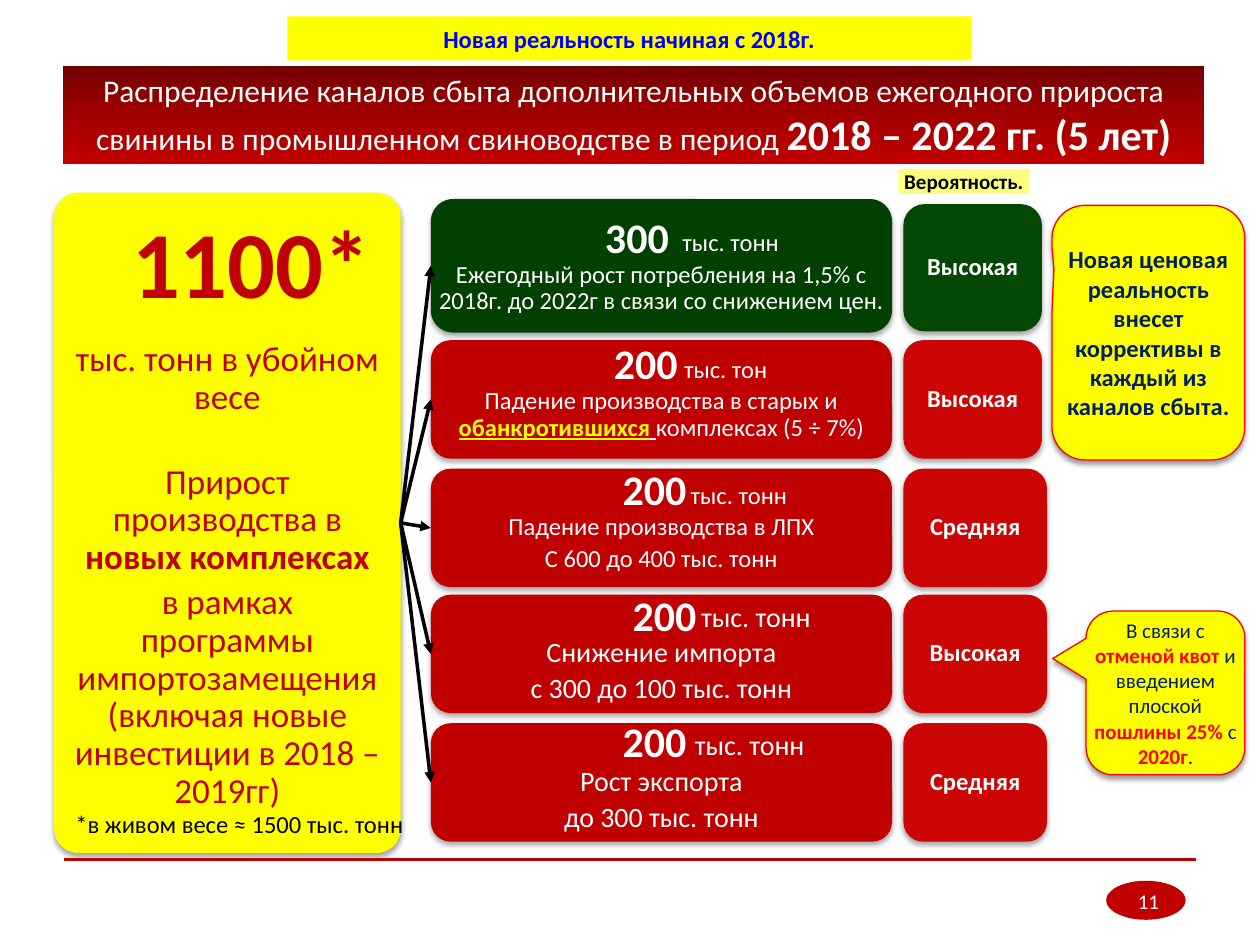
from copy import deepcopy
from lxml.etree import SubElement
from pptx import Presentation
from pptx.dml.color import RGBColor
from pptx.enum.shapes import MSO_CONNECTOR, MSO_SHAPE
from pptx.enum.text import MSO_ANCHOR, MSO_AUTO_SIZE, PP_ALIGN
from pptx.oxml.ns import qn
from pptx.util import Pt

T = dict(
    font="Calibri", white="FFFFFF", black="000000", red="C00000", cell="CC0505",
    bright="FF0000", green="004000", deep="054705", yellow="FFFF00", blue="0000FF",
    navy="002060", ramp=("720000", "A20000", "C00000"),
    tiny=12, small=14, mid=16, lead=18, large=20, number=24, huge=54,
)

prs = Presentation()
prs.slide_width, prs.slide_height = Pt(720), Pt(540)
U = prs.slide_width / 10
s = prs.slides.add_slide(prs.slide_layouts[1])


def box(kind, at, fill=None, line=None, adj=(), shadow=None):
    at = [int(v * U) for v in at]
    if kind is None:
        return s.shapes.add_textbox(*at)
    sp = s.shapes.add_shape(kind, *at)
    sp.shadow.inherit = False
    sp.fill.solid()
    sp.fill.fore_color.rgb = RGBColor.from_string(fill)
    if line:
        sp.line.color.rgb = RGBColor.from_string(line)
        sp.line.width = Pt(0.75)
    else:
        sp.line.fill.background()
    for i, v in enumerate(adj):
        sp.adjustments[i] = v
    if shadow:
        fx = sp._element.spPr.find(qn("a:effectLst"))
        sh = SubElement(fx, qn("a:outerShdw"), blurRad="40000", dist="23000", dir="5400000", rotWithShape="0")
        c = SubElement(sh, qn("a:srgbClr"), val=T["black"])
        SubElement(c, qn("a:alpha"), val=str(shadow * 1000))
    return sp


def write(sp, paras, size, color, bold=False, ins=(0.1, 0.05, 0.1, 0.05), anchor=MSO_ANCHOR.MIDDLE,
          align=PP_ALIGN.CENTER, spacing=None, gaps=None, indent=0, wrap=True):
    tf = sp.text_frame
    frame = dict(word_wrap=wrap, auto_size=MSO_AUTO_SIZE.NONE, vertical_anchor=anchor)
    sides = ("margin_left", "margin_top", "margin_right", "margin_bottom")
    frame.update(zip(sides, (int(v * U) for v in ins)))
    for k, v in frame.items():
        setattr(tf, k, v)
    for i, runs in enumerate(paras):
        p = tf.paragraphs[0] if i == 0 else tf.add_paragraph()
        pPr = p._p.get_or_add_pPr()
        pPr.set("marL", str(int(indent * U) if i == 0 else 0))
        pPr.set("indent", "0")
        SubElement(pPr, qn("a:buNone"))
        before = 0 if i == 0 else gaps[i - 1] if gaps else size * 0.2
        for k, v in dict(alignment=align, line_spacing=spacing, space_before=Pt(before)).items():
            setattr(p, k, v)
        for text, fmt in [(runs, {})] if isinstance(runs, str) else runs:
            r = p.add_run()
            r.text = text
            fmt = dict(name=T["font"], size=size, color=color, bold=bold) | fmt
            r.font.color.rgb = RGBColor.from_string(fmt.pop("color"))
            fmt["size"] = Pt(fmt["size"])
            for k, v in fmt.items():
                setattr(r.font, k, v)
    return sp


title, body = s.shapes.title, s.placeholders[1]
for sp, at in ((title, (0.5, 0.52, 9.06, 0.78)), (body, (2.28, 0.13, 5.43, 0.35))):
    for k, v in zip(("left", "top", "width", "height"), at):
        setattr(sp, k, int(v * U))
title.fill.gradient()
title.fill.gradient_angle = 270
for stop, c in zip(title.fill.gradient_stops, T["ramp"][::2]):
    stop.color.rgb = RGBColor.from_string(c)
gs = title._element.spPr.find(".//" + qn("a:gsLst"))
middle = deepcopy(gs[0])
middle.set("pos", "50000")
middle.find(qn("a:srgbClr")).set("val", T["ramp"][1])
gs.insert(1, middle)
write(title, [[
    ("Распределение каналов сбыта дополнительных объемов ежегодного прироста свинины в промышленном свиноводстве в период ", {}),
    ("2018 – 2022 гг. (5 лет)", dict(size=T["number"], bold=True)),
]], T["lead"], T["white"])
body.fill.solid()
body.fill.fore_color.rgb = RGBColor.from_string(T["yellow"])
write(body, ["Новая реальность начиная с 2018г."], T["small"], T["blue"], True)

ROUND, CALLOUT = MSO_SHAPE.ROUNDED_RECTANGLE, MSO_SHAPE.ROUNDED_RECTANGULAR_CALLOUT
sp = box(ROUND, (0.43, 1.53, 2.75, 5.24), T["yellow"], adj=[0.07], shadow=35)
write(sp, [
    "тыс. тонн в убойном весе",
    [("Прирост производства в ", {}), ("новых комплексах", dict(bold=True))],
    "в рамках программы импортозамещения (включая новые инвестиции в 2018 – 2019гг)",
], T["large"], T["red"], ins=(0.1, 1.12, 0.1, 0.05), anchor=MSO_ANCHOR.TOP, spacing=0.9, gaps=(27, 4))
sp = write(box(None, (0.94, 1.57, 2.11, 1.01)), ["1100*"], T["huge"], T["red"], True,
           anchor=MSO_ANCHOR.TOP, wrap=False)
rPr = sp.text_frame.paragraphs[0].runs[0]._r.rPr
fx = rPr.makeelement(qn("a:effectLst"))
rPr.find(qn("a:solidFill")).addnext(fx)
sh = SubElement(fx, qn("a:outerShdw"), blurRad="38100", dist="38100", dir="2700000")
SubElement(SubElement(sh, qn("a:srgbClr"), val=T["black"]), qn("a:alpha"), val="43000")

bankrupt = dict(color=T["yellow"], bold=True, underline=True)
channels = [
    (1.58, 1.06, "300", "тыс. тонн", 1.1, 4.62, T["small"], "Высокая", 1.1,
     ["Ежегодный рост потребления на 1,5% с 2018г. до 2022г в связи со снижением цен."]),
    (2.7, 0.94, "200", "тыс. тон", 1.02, 4.69, T["small"], "Высокая", 1.1,
     [[("Падение производства в старых и ", {}), ("обанкротившихся", bankrupt),
       (" ", dict(underline=True)), ("комплексах (5 ÷ 7%)", {})]]),
    (3.72, 0.94, "200", "тыс. тонн", 1.23, 4.76, T["small"], "Средняя", 1.14,
     ["Падение производства в ЛПХ", "С 600 до 400 тыс. тонн"]),
    (4.72, 0.94, "200", "тыс. тонн", 1.5, 4.84, T["mid"], "Высокая", 1.14,
     ["Снижение импорта", "с 300 до 100 тыс. тонн"]),
    (5.74, 0.94, "200", "тыс. тонн", 1.4, 4.76, T["mid"], "Средняя", 1.14,
     ["Рост экспорта", "до 300 тыс. тонн"]),
]
lines = [((9.49, 6.82), (0.51, 6.82), T["red"], 1.5, False)]
for i, (y, h, amount, unit, indent, x, size, chance, w, text) in enumerate(channels):
    first = i == 0
    sp = box(ROUND, (3.42, y, 3.66, h), T["green"] if first else T["red"], shadow=35)
    write(sp, [unit] + text, size, T["white"], spacing=0.9, indent=indent,
          ins=(0, 0.16, 0, 0.05) if first else (0.1, 0.05, 0.1, 0.05))
    write(box(None, (x, 1.63 + i, 0.87, 0.5)), [amount], T["number"], T["white"], True, anchor=MSO_ANCHOR.TOP)
    at = (7.17, 1.62, w, 1.01) if first else (7.17, y, w, h)
    sp = box(ROUND, at, T["deep"] if first else T["cell"], shadow=35)
    write(sp, [chance], T["small"], T["white"], True, spacing=0.9)
    lines.append(((3.18, 4.15), (3.42, y + h / 2), T["black"], 2, True))

for start, end, color, width, arrow in lines:
    cn = s.shapes.add_connector(MSO_CONNECTOR.STRAIGHT, *(int(v * U) for v in start + end))
    cn.line.color.rgb = RGBColor.from_string(color)
    cn.line.width = Pt(width)
    if arrow:
        SubElement(cn.line._get_or_add_ln(), qn("a:tailEnd"), type="triangle")
    SubElement(cn._element.spPr, qn("a:effectLst"))

write(box(None, (0.5, 6.37, 3.07, 0.34)), ["*в живом весе ≈ 1500 тыс. тонн"], T["small"], T["black"],
      anchor=MSO_ANCHOR.TOP, align=PP_ALIGN.LEFT)
sp = box(MSO_SHAPE.RECTANGLE, (7.13, 1.34, 1.04, 0.2), T["yellow"])
SubElement(sp._element.spPr.find(".//" + qn("a:srgbClr")), qn("a:alpha"), val="50000")
write(sp, ["Вероятность."], T["tiny"], T["black"], True, ins=(0, 0, 0, 0))

accent = dict(color=T["bright"], bold=True)
callouts = [
    ((8.35, 1.63, 1.53, 2.02), (-0.49, -0.25, 0.17), T["small"], True,
     "Новая ценовая реальность внесет коррективы в каждый из каналов сбыта."),
    ((8.62, 4.85, 1.26, 1.3), (-0.71, -0.21, 0.17), T["tiny"], False,
     [("В связи с ", {}), ("отменой квот ", accent), ("и введением плоской ", {}),
      ("пошлины 25% ", accent), ("с ", {}), ("2020г", accent), (".", {})]),
]
for at, adj, size, bold, text in callouts:
    sp = box(CALLOUT, at, T["yellow"], T["bright"], adj, 38)
    write(sp, [text], size, T["navy"], bold, ins=(0, 0.05, 0, 0.05))

box(MSO_SHAPE.OVAL, (8.78, 6.99, 0.63, 0.31), T["red"])
write(box(None, (8.62, 6.95, 0.99, 0.4)), ["11"], T["tiny"], T["white"])

prs.save("out.pptx")
